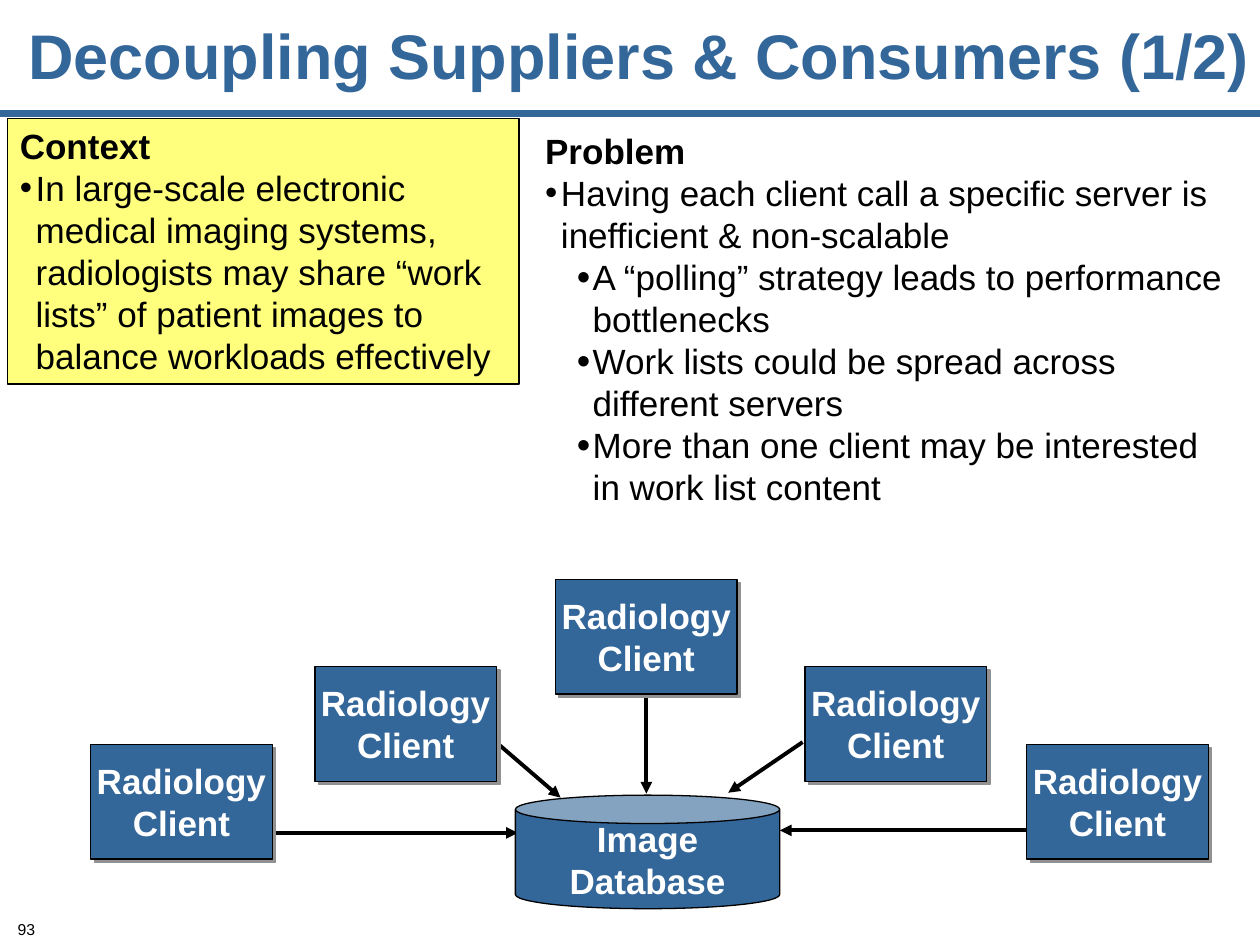
from dataclasses import dataclass

from lxml import etree
from pptx import Presentation
from pptx.dml.color import RGBColor
from pptx.enum.shapes import MSO_CONNECTOR, MSO_SHAPE
from pptx.enum.text import MSO_ANCHOR, PP_ALIGN
from pptx.oxml.ns import qn
from pptx.util import Cm, Pt

RECT, CAN = MSO_SHAPE.RECTANGLE, MSO_SHAPE.CAN
LINE = MSO_CONNECTOR.STRAIGHT
LEFT, CENTER, RIGHT = PP_ALIGN.LEFT, PP_ALIGN.CENTER, PP_ALIGN.RIGHT
TOP, MIDDLE = MSO_ANCHOR.TOP, MSO_ANCHOR.MIDDLE


@dataclass(frozen=True)
class Theme:
    font: str = "Arial"
    blue: str = "336699"
    yellow: str = "FFFF7D"
    black: str = "000000"
    white: str = "FFFFFF"
    gray: str = "919191"
    title: int = 36
    body: int = 20
    small: int = 9


THEME = Theme()
HANG = 0.32
CLIENT = ("Radiology", "Client")
CLIENTS = [(1.83, 15.01), (6.35, 13.44), (11.2, 11.68), (16.23, 13.44), (20.7, 15.01)]
ARROWS = [
    (4.8, 16.79, 10.44, 16.79),
    (23.65, 16.74, 15.72, 16.74),
    (16.18, 14.96, 14.68, 15.98),
    (9.58, 14.6, 11.3, 16.08),
    (13.03, 14.05, 13.03, 16),
]
CONTEXT = [
    "In large-scale electronic medical imaging systems, radiologists may share "
    "“work lists” of patient images to balance workloads effectively",
]
PROBLEM = "Having each client call a specific server is inefficient & non-scalable"
ISSUES = [
    "A “polling” strategy leads to performance bottlenecks",
    "Work lists could be spread across different servers",
    "More than one client may be interested in work list content",
]


def rgb(color):
    return RGBColor.from_string(color)


def add_node(parent, tag, **attrs):
    node = etree.SubElement(parent, qn(tag))
    for key, value in attrs.items():
        node.set(key, str(value))
    return node


def add_text(frame, text, size=THEME.body, color=THEME.black, bold=False,
             align=LEFT, space=None, left=0, scale=None):
    first = frame.paragraphs[0]
    para = frame.add_paragraph() if first.runs else first
    para.alignment = align
    if space:
        para.line_spacing = space
    if left:
        props = para._p.get_or_add_pPr()
        props.set("marL", str(Cm(left)))
        props.set("indent", str(-Cm(HANG)))
    if scale:
        tint = add_node(props, "a:buClr")
        add_node(tint, "a:srgbClr", val=THEME.black)
        add_node(props, "a:buSzPct", val=scale * 1000)
        add_node(props, "a:buFont", typeface=THEME.font)
        add_node(props, "a:buChar", char="•")
    run = para.add_run()
    run.text = text
    font = run.font
    font.name, font.size, font.bold = THEME.font, Pt(size), bold
    font.color.rgb = rgb(color)


def set_frame(frame, anchor=TOP, wrap=True):
    frame.vertical_anchor, frame.word_wrap = anchor, wrap
    return frame


def add_box(slide, *area, anchor=TOP):
    box = slide.shapes.add_textbox(*map(Cm, area))
    return set_frame(box.text_frame, anchor)


def add_shape(slide, kind, *area, fill, width):
    shape = slide.shapes.add_shape(kind, *map(Cm, area))
    shape.shadow.inherit = False
    shape.fill.solid()
    shape.fill.fore_color.rgb = rgb(fill)
    shape.line.color.rgb = rgb(THEME.black)
    shape.line.width = Pt(width)
    return shape


def add_block(slide, kind, words, *area):
    shape = add_shape(slide, kind, *area, fill=THEME.blue, width=0.75)
    frame = set_frame(shape.text_frame, MIDDLE, False)
    for word in words:
        add_text(frame, word, color=THEME.white, bold=True, align=CENTER)
    return shape


def add_client(slide, left, top):
    shape = add_block(slide, RECT, CLIENT, left, top, 3.66, 2.31)
    effects = shape._element.spPr.find(qn("a:effectLst"))
    shade = add_node(effects, "a:outerShdw", dist=Pt(2.8), dir=45 * 60000,
                     algn="ctr", rotWithShape=0)
    add_node(shade, "a:srgbClr", val=THEME.gray)


def add_line(slide, *ends, color=THEME.black, width=2.25, head=True):
    line = slide.shapes.add_connector(LINE, *map(Cm, ends))
    line.line.color.rgb = rgb(color)
    line.line.width = Pt(width)
    if head:
        add_node(line.line._get_or_add_ln(), "a:tailEnd", type="triangle")
    add_node(line._element.spPr, "a:effectLst")


def add_list(frame, title, points, scale=100, left=HANG):
    if title:
        add_text(frame, title, bold=True, left=left)
    for point in points:
        add_text(frame, point, left=left, scale=scale)


def main():
    deck = Presentation()
    deck.slide_width, deck.slide_height = Cm(25.4), Cm(19.05)
    slide = deck.slides.add_slide(deck.slide_layouts[6])

    add_line(slide, 0, 2.29, 25.4, 2.29, color=THEME.blue, width=3.75, head=False)
    page = add_box(slide, 0, 18.59, 0.71, 0.33)
    page.margin_left = page.margin_right = page.margin_top = page.margin_bottom = 0
    add_text(page, "93", size=THEME.small, align=RIGHT, space=0.9)
    title = add_box(slide, 0.25, -0.1, 25.27, 2.54, anchor=MIDDLE)
    add_text(title, "Decoupling Suppliers & Consumers (1/2)", size=THEME.title,
             color=THEME.blue, bold=True, align=CENTER, space=0.95)

    problem = add_box(slide, 10.74, 2.49, 14.27, 7.87)
    add_list(problem, "Problem", [PROBLEM])
    add_list(problem, None, ISSUES, scale=110, left=3 * HANG)
    context = add_shape(slide, RECT, 0.15, 2.39, 10.31, 5.36,
                        fill=THEME.yellow, width=1)
    add_list(set_frame(context.text_frame), "Context", CONTEXT)

    for ends in ARROWS:
        add_line(slide, *ends)
    add_block(slide, CAN, ("Image", "Database"), 10.39, 16.03, 5.33, 2.29)
    for spot in CLIENTS:
        add_client(slide, *spot)
    deck.save("out.pptx")


if __name__ == "__main__":
    main()
